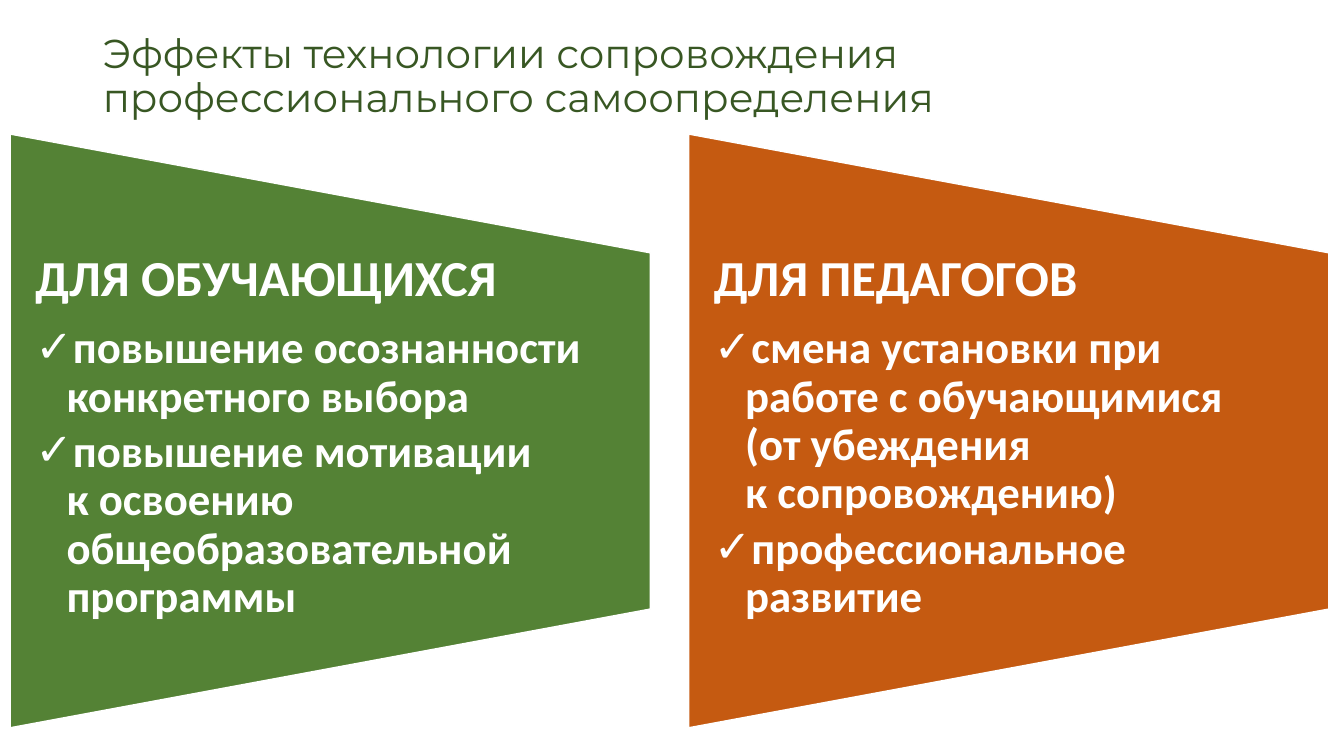
import pptx
import pptx.dml.color
import pptx.enum.shapes
import pptx.enum.text
import pptx.util
from lxml import etree

Inches, Pt = pptx.util.Inches, pptx.util.Pt
DRAWING = "http://schemas.openxmlformats.org/drawingml/2006/main"


def color(hex_value):
    return pptx.dml.color.RGBColor.from_string(hex_value)


def write(paragraph, text, size, font="Calibri", hex_value="FFFFFF", bold=True,
          space_after=0, bullet=None, hanging=0):
    """Fill a paragraph with left-aligned text; newlines become line breaks."""
    properties = paragraph._p.get_or_add_pPr()
    properties.set("marL", str(Inches(hanging)))
    properties.set("indent", str(-Inches(hanging)))
    if bullet:
        etree.SubElement(properties, f"{{{DRAWING}}}buFont", typeface="Arial")
        etree.SubElement(properties, f"{{{DRAWING}}}buChar", char=bullet)
        paragraph.level = 1
    else:
        etree.SubElement(properties, f"{{{DRAWING}}}buNone")
    paragraph.alignment = pptx.enum.text.PP_ALIGN.LEFT
    paragraph.line_spacing = 0.9
    paragraph.space_before = Pt(0)
    paragraph.space_after = Pt(space_after)
    paragraph.text = text
    for run in paragraph.runs:
        run.font.name = font
        run.font.size = Pt(size)
        run.font.bold = bold
        run.font.color.rgb = color(hex_value)


presentation = pptx.Presentation()
presentation.slide_width = Inches(13.33)
presentation.slide_height = Inches(7.5)
slide = presentation.slides.add_slide(presentation.slide_layouts.get_by_name("Two Content"))
title, *bodies = [p for p in slide.placeholders if p.placeholder_format.idx < 3]

title.left, title.top, title.width, title.height = map(Inches, (0.92, 0.4, 11.5, 0.74))
title.text_frame.auto_size = pptx.enum.text.MSO_AUTO_SIZE.NONE
title.text_frame.vertical_anchor = pptx.enum.text.MSO_ANCHOR.MIDDLE
write(title.text_frame.paragraphs[0],
      "Эффекты технологии сопровождения профессионального самоопределения",
      28.8, font="Montserrat", hex_value="385723", bold=False)

panels = [
    ("548235", "ДЛЯ ОБУЧАЮЩИХСЯ", [
        "повышение осознанности конкретного выбора",
        "повышение мотивации \nк освоению общеобразовательной программы"]),
    ("C55A11", "ДЛЯ ПЕДАГОГОВ", [
        "смена установки при работе с обучающимися\n(от убеждения \nк сопровождению)",
        "профессиональное развитие"]),
]
panel_left, panel_top, panel_pitch = 0.1, 1.33, 6.73
panel_width, panel_height = 6.35, 5.89
text_share = 0.6

for column, (body, (fill, heading, effects)) in enumerate(zip(bodies, panels)):
    left = panel_left + column * panel_pitch
    center_x, center_y = left + panel_width / 2, panel_top + panel_height / 2

    # The quarter turn swaps the panel's width and height
    panel = slide.shapes.add_shape(
        pptx.enum.shapes.MSO_SHAPE.FLOWCHART_MANUAL_OPERATION,
        Inches(center_x - panel_height / 2), Inches(center_y - panel_width / 2),
        Inches(panel_height), Inches(panel_width))
    panel.rotation = 270
    panel.shadow.inherit = False
    panel.fill.solid()
    panel.fill.fore_color.rgb = color(fill)
    panel.line.color.rgb = color("FFFFFF")
    panel.line.width = Pt(1)
    title._element.addnext(panel._element)

    text_height = panel_height * text_share
    body.left, body.top = Inches(left), Inches(center_y - text_height / 2)
    body.width, body.height = Inches(panel_width), Inches(text_height)
    frame = body.text_frame
    frame.word_wrap = True
    frame.auto_size = pptx.enum.text.MSO_AUTO_SIZE.NONE
    frame.vertical_anchor = pptx.enum.text.MSO_ANCHOR.TOP
    frame.margin_left = frame.margin_right = Inches(0.25)
    frame.margin_top = frame.margin_bottom = 0
    write(frame.paragraphs[0], heading, 36, space_after=12.6)
    for effect in effects:
        write(frame.add_paragraph(), effect, 32, space_after=4.8,
              bullet="✓", hanging=0.31)

presentation.save("out.pptx")
